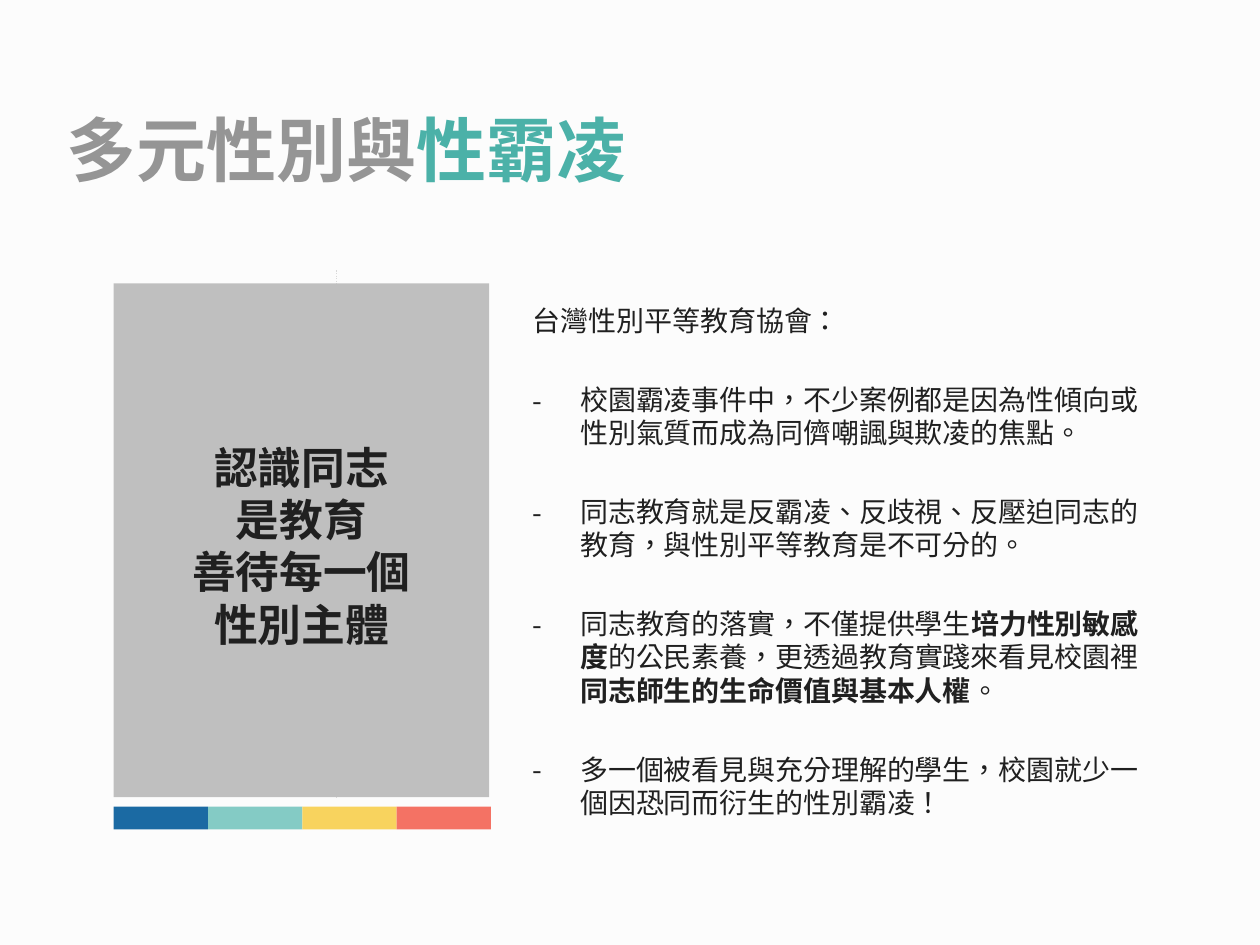
from lxml import etree
from pptx import Presentation
from pptx.dml.color import RGBColor
from pptx.enum import dml, shapes, text
from pptx.oxml import ns
from pptx.util import Pt

FONT = "Noto Sans CJK SC"
COLORS = {
    "background": "FCFCFC", "text": "202020", "panel": "BFBFBF", "guide": "D9D9D9",
    "title": "959595", "accent": "4BB1A8",
    "blue": "1B6AA3", "teal": "84CBC5", "yellow": "F8D35E", "coral": "F47264",
}
SLOGAN = ["認識同志", "是教育", "善待每一個", "性別主體"]
INTRO = "台灣性別平等教育協會："
# Each point is a list of (wording, bold) runs.
POINTS = [
    [("校園霸凌事件中，不少案例都是因為性傾向或性別氣質而成為同儕嘲諷與欺凌的焦點。", False)],
    [("同志教育就是反霸凌、反歧視、反壓迫同志的教育，與性別平等教育是不可分的。", False)],
    [("同志教育的落實，不僅提供學生", False), ("培力性別敏感度", True),
     ("的公民素養，更透過教育實踐來看見校園裡", False),
     ("同志師生的生命價值與基本人權", True), ("。", False)],
    [("多一個被看見與充分理解的學生，校園就少一個因恐同而衍生的性別霸凌！", False)],
]


def rgb(name):
    return RGBColor.from_string(COLORS[name])


def add_run(p, words, size, color="text", bold=False):
    r = p.add_run()
    r.text = words
    r.font.size, r.font.bold, r.font.name = Pt(size), bold, FONT
    r.font.color.rgb = rgb(color)
    rPr = r.font._element
    rPr.set("lang", "zh-TW")
    etree.SubElement(rPr, ns.qn("a:ea"), typeface=FONT)


def add_paragraph(tf, first):
    return tf.paragraphs[0] if first else tf.add_paragraph()


def add_block(s, left, top, width, height, color):
    block = s.shapes.add_shape(shapes.MSO_SHAPE.RECTANGLE, Pt(left), Pt(top), Pt(width), Pt(height))
    block.shadow.inherit = False
    block.fill.solid()
    block.fill.fore_color.rgb = rgb(color)
    block.line.fill.background()
    return block


def add_title(s, left, top, width, height):
    title = s.shapes.title
    title.left, title.top, title.width, title.height = Pt(left), Pt(top), Pt(width), Pt(height)
    tf = title.text_frame
    tf.vertical_anchor = text.MSO_ANCHOR.MIDDLE
    p = tf.paragraphs[0]
    p.alignment = text.PP_ALIGN.LEFT
    add_run(p, "多元性別與", 40, "title", True)
    add_run(p, "性霸凌", 40, "accent", True)


def add_guide(s, x, top, bottom):
    guide = s.shapes.add_connector(shapes.MSO_CONNECTOR.STRAIGHT, Pt(x), Pt(top), Pt(x), Pt(bottom))
    guide.line.color.rgb = rgb("guide")
    guide.line.width = Pt(0.75)
    guide.line.dash_style = dml.MSO_LINE.ROUND_DOT
    etree.SubElement(guide._element.spPr, ns.qn("a:effectLst"))


def add_slogan_panel(s, left, top, width, height):
    """Grey panel with the slogan, above a strip of four colours."""
    panel_height = height - 18.5
    add_guide(s, left + 127.5, top - 7.5, top + panel_height + 1)
    tf = add_block(s, left, top, width - 1, panel_height, "panel").text_frame
    tf.word_wrap = True
    tf.vertical_anchor = text.MSO_ANCHOR.MIDDLE
    tf.margin_top = Pt(9)
    for i, words in enumerate(SLOGAN):
        p = add_paragraph(tf, i == 0)
        p.alignment = text.PP_ALIGN.CENTER
        p.line_spacing = Pt(29.9)
        add_run(p, words, 25, bold=True)

    step = width / 4
    for i, color in enumerate(["blue", "teal", "yellow", "coral"]):
        add_block(s, left + i * step, top + height - 13, step, 13, color)


def add_dash(p, indent):
    pPr = p._p.get_or_add_pPr()
    pPr.set("marL", str(Pt(indent)))
    pPr.set("indent", str(-Pt(indent)))
    etree.SubElement(pPr, ns.qn("a:buFont"), typeface=FONT)
    etree.SubElement(pPr, ns.qn("a:buChar"), char="-")


def add_points(s, left, top, width, height):
    tf = s.shapes.add_textbox(Pt(left), Pt(top), Pt(width), Pt(height)).text_frame
    tf.word_wrap = True
    for i, runs in enumerate([[(INTRO, False)]] + POINTS):
        p = add_paragraph(tf, i == 0)
        p.line_spacing = Pt(19.05)
        if i:
            p.space_before = Pt(26)
            add_dash(p, 27)
        for words, bold in runs:
            add_run(p, words, 16, bold=bold)


def main():
    prs = Presentation()
    prs.slide_width, prs.slide_height = Pt(720), Pt(540)
    s = prs.slides.add_slide(prs.slide_layouts[5])
    s.background.fill.solid()
    s.background.fill.fore_color.rgb = rgb("background")
    add_title(s, 31, 54.5, 648, 61)
    add_slogan_panel(s, 65, 162, 215.5, 312)
    add_points(s, 297.5, 170, 368, 280)
    prs.save("out.pptx")


if __name__ == "__main__":
    main()
